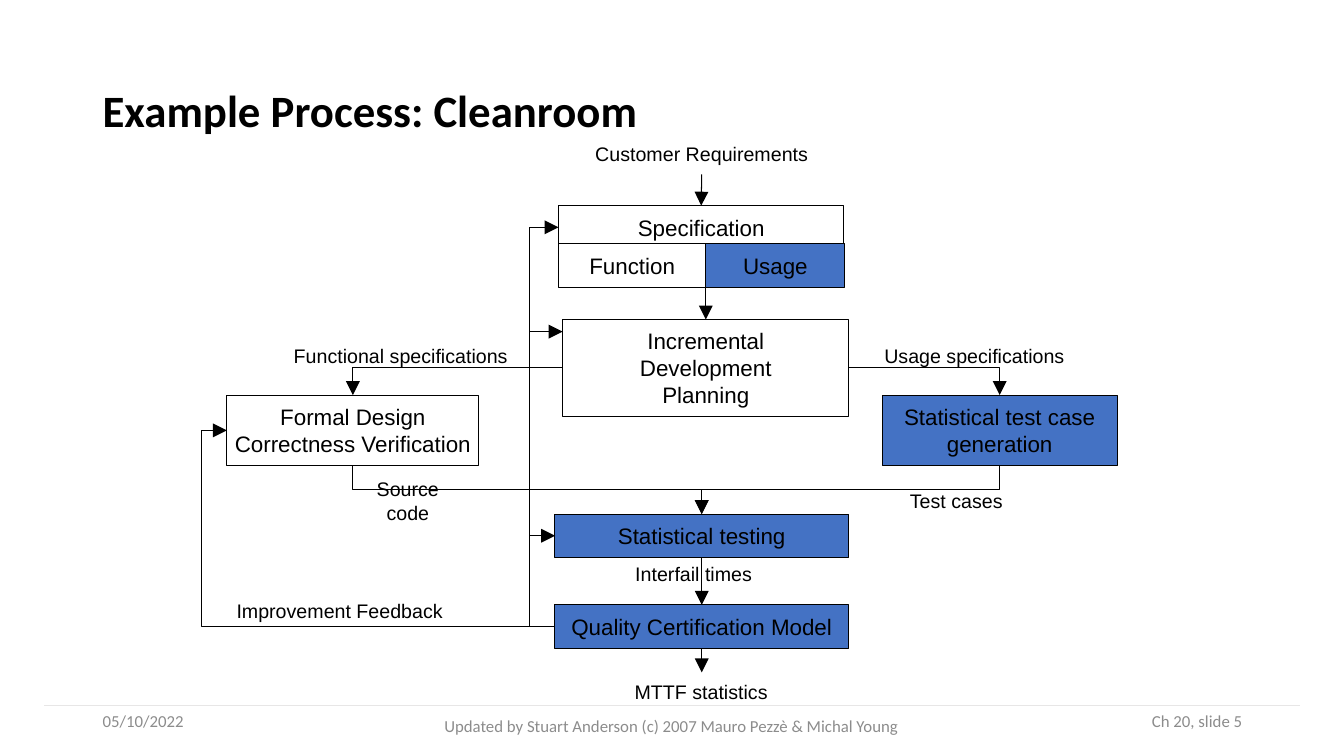
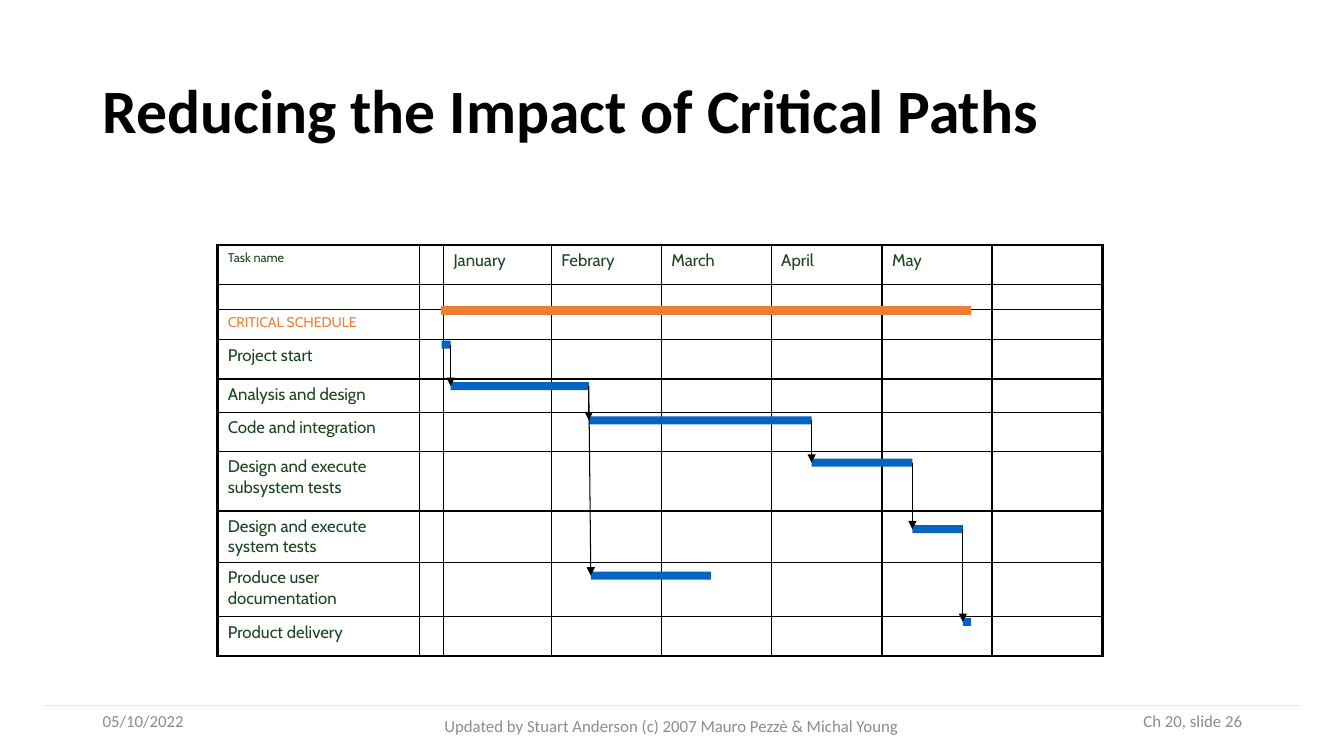
"""Build two slides on software process: a cleanroom flow diagram and a project schedule."""

import dataclasses

import lxml.etree
import pptx
import pptx.dml.color
import pptx.enum.shapes
import pptx.enum.text
import pptx.oxml.ns
import pptx.shapes.autoshape
import pptx.util

Inches = pptx.util.Inches
Pt = pptx.util.Pt
qn = pptx.oxml.ns.qn
Align = pptx.enum.text.PP_ALIGN
ShapeKind = pptx.enum.shapes.MSO_SHAPE
ConnectorKind = pptx.enum.shapes.MSO_CONNECTOR
TOP, LEFT, BOTTOM, RIGHT = range(4)


@dataclasses.dataclass(frozen=True)
class Theme:
    black: str = "000000"
    white: str = "FFFFFF"
    blue: str = "4472C4"
    bar_blue: str = "0563C1"
    orange: str = "ED7D31"
    green: str = "1A4422"
    grey: str = "8C8C8C"
    rule: str = "E7E6E6"
    heading_font: str = "Calibri"
    diagram_font: str = "Arial"
    table_font: str = "Cabin"
    footer_size: float = 12
    box_size: float = 16
    label_size: float = 14
    table_size: float = 12
    critical_size: float = 10
    caption_size: float = 9
    empty_size: float = 8
    thin: float = 0.75
    grid: float = 1
    frame: float = 2.25


theme = Theme()


def add_box(slide, bounds, text="", font=theme.diagram_font, size=theme.box_size,
            color=theme.black, bold=False, align=Align.CENTER, inset=0, fill=None, outline=None):
    """Add a text box, or a rectangle when a fill is given."""
    area = [Inches(value) for value in bounds]
    if fill is None:
        box = slide.shapes.add_textbox(*area)
    else:
        box = slide.shapes.add_shape(ShapeKind.RECTANGLE, *area)
        box.shadow.inherit = False
        box.fill.solid()
        box.fill.fore_color.rgb = pptx.dml.color.RGBColor.from_string(fill)
        if outline is None:
            box.line.fill.background()
        else:
            box.line.color.rgb = pptx.dml.color.RGBColor.from_string(outline)
            box.line.width = Pt(theme.thin)
    if text:
        frame = box.text_frame
        frame.word_wrap = True
        frame.vertical_anchor = pptx.enum.text.MSO_ANCHOR.MIDDLE
        frame.margin_left = frame.margin_right = Inches(inset)
        frame.margin_top = frame.margin_bottom = Inches(0.05)
        frame.text = text
        for para in frame.paragraphs:
            para.alignment = align
            for span in para.runs:
                span.font.name = font
                span.font.size = Pt(size)
                span.font.bold = bold
                span.font.color.rgb = pptx.dml.color.RGBColor.from_string(color)
    return box


def add_link(slide, begin, end, color=theme.black, head="lg", kind=ConnectorKind.STRAIGHT):
    """Connect two stops, each a point or a (shape, side) pair."""
    joined = [isinstance(stop[0], pptx.shapes.autoshape.Shape) for stop in (begin, end)]
    points = [(0, 0) if joint else stop for stop, joint in zip((begin, end), joined)]
    link = slide.shapes.add_connector(kind, *[Inches(value) for value in points[0] + points[1]])
    if joined[0]:
        link.begin_connect(*begin)
    if joined[1]:
        link.end_connect(*end)
    link.line.color.rgb = pptx.dml.color.RGBColor.from_string(color)
    link.line.width = Pt(theme.thin)
    properties = link._element.spPr
    if head:
        lxml.etree.SubElement(properties.find(qn("a:ln")), qn("a:tailEnd"),
                              type="triangle", w=head, len=head)
    lxml.etree.SubElement(properties, qn("a:effectLst"))
    return link


deck = pptx.Presentation()
deck.slide_width = Inches(13.33)
deck.slide_height = Inches(7.5)

slides = []
for title, title_size, number in [
    ("Example Process: Cleanroom", 32, 5),
    ("Reducing the Impact of Critical Paths", 44, 26),
]:
    slide = deck.slides.add_slide(deck.slide_layouts[6])
    slides.append(slide)
    add_link(slide, (0.44, 7), (12.89, 7), theme.rule, head=None)
    heading = add_box(slide, (0.92, 0.4, 11.5, 1.45), title, theme.heading_font, title_size,
                      bold=True, align=Align.LEFT, inset=0.1)
    heading.text_frame.paragraphs[0].line_spacing = 0.9
    for bounds, text, align in [
        ((0.92, 6.95, 1.97, 0.4), "05/10/2022", Align.LEFT),
        ((4.16, 7, 5, 0.4), "Updated by Stuart Anderson (c) 2007 Mauro Pezzè & Michal Young",
         Align.CENTER),
        ((10.29, 6.95, 2.13, 0.4), f"Ch 20, slide {number}", Align.RIGHT),
    ]:
        add_box(slide, bounds, text, theme.heading_font, theme.footer_size, theme.grey,
                align=align, inset=0.1)

process, schedule = slides

boxes = {}
for name, bounds, text, fill in [
    ("specification", (5.54, 2.04, 2.83, 0.43), "Specification", theme.white),
    ("function", (5.54, 2.42, 1.46, 0.43), "Function", theme.white),
    ("usage", (7, 2.42, 1.38, 0.43), "Usage", theme.blue),
    ("planning", (5.58, 3.17, 2.84, 0.96), "Incremental\nDevelopment\nPlanning", theme.white),
    ("generation", (8.75, 3.92, 2.33, 0.7), "Statistical test case generation", theme.blue),
    ("design", (2.25, 3.92, 2.5, 0.7), "Formal Design\nCorrectness Verification", theme.white),
    ("testing", (5.5, 5.1, 2.92, 0.43), "Statistical testing", theme.blue),
    ("quality", (5.5, 6, 2.92, 0.43), "Quality Certification Model", theme.blue),
]:
    boxes[name] = add_box(process, bounds, text, fill=fill, outline=theme.black)

for left, top, width, text in [
    (5.67, 1.33, 2.58, "Customer Requirements"),
    (8.58, 3.33, 2.17, "Usage specifications"),
    (2.87, 3.33, 2.21, "Functional specifications"),
    (3.52, 4.77, 1.05, "Source code"),
    (8.92, 4.77, 1.13, "Test cases"),
    (5.67, 5.5, 2.42, "Interfail times"),
    (2.08, 5.86, 2.58, "Improvement Feedback"),
    (6.08, 6.67, 1.75, "MTTF statistics"),
]:
    add_box(process, (left, top, width, 0.39), text, size=theme.label_size)

for begin, end in [
    ((6.96, 1.73), (boxes["specification"], TOP)),
    ((7, 2.63), (boxes["planning"], TOP)),
    ((boxes["testing"], BOTTOM), (boxes["quality"], TOP)),
    ((boxes["quality"], BOTTOM), (6.96, 6.67)),
]:
    add_link(process, begin, end)

feedback = (boxes["quality"], LEFT)
for begin, end, rotation, flip, turn in [
    ((boxes["planning"], RIGHT), (boxes["generation"], TOP), 0, None, None),
    ((boxes["planning"], LEFT), (boxes["design"], TOP), 180, "flipV", None),
    ((boxes["design"], BOTTOM), (boxes["testing"], TOP), 270, "flipH", 0.24),
    ((boxes["generation"], BOTTOM), (boxes["testing"], TOP), 90, None, 0.24),
    (feedback, (boxes["specification"], LEFT), 180, "flipH", -0.25),
    (feedback, (5.58, 3.29), 180, "flipH", -0.25),
    (feedback, (boxes["testing"], LEFT), 180, "flipH", -0.25),
    (feedback, (boxes["design"], LEFT), 180, None, 3.5),
]:
    elbow = add_link(process, begin, end, kind=ConnectorKind.ELBOW)
    center_x = (elbow.begin_x + elbow.end_x) // 2
    center_y = (elbow.begin_y + elbow.end_y) // 2
    width = max(abs(elbow.end_x - elbow.begin_x), Inches(0.01))
    height = abs(elbow.end_y - elbow.begin_y)
    if rotation in (90, 270):
        width, height = height, width
    elbow.left, elbow.top = center_x - width // 2, center_y - height // 2
    elbow.width, elbow.height = width, height
    elbow.rotation = rotation
    transform = elbow._element.spPr.find(qn("a:xfrm"))
    for name in ("flipH", "flipV"):
        transform.set(name, "1" if name == flip else "0")
    geometry = elbow._element.spPr.find(qn("a:prstGeom"))
    if turn is None:
        geometry.set("prst", "bentConnector2")
    else:
        share = round(Inches(turn) / width * 100000)
        lxml.etree.SubElement(geometry.find(qn("a:avLst")), qn("a:gd"),
                              name="adj1", fmla=f"val {share}")

column_widths = [2, 0.23, 1.07, 1.09, 1.09, 1.1, 1.09, 1.1]
row_heights = [0.39, 0.25, 0.3, 0.39, 0.33, 0.39, 0.59, 0.51, 0.54, 0.39]
months = ["", "January", "Febrary", "March", "April", "May", ""]
tasks = [
    "Task name", "", "CRITICAL SCHEDULE", "Project start", "Analysis and design",
    "Code and integration", "Design and execute subsystem tests",
    "Design and execute system tests", "Produce user documentation", "Product delivery",
]
special_styles = {
    "Task name": (theme.caption_size, theme.green),
    "CRITICAL SCHEDULE": (theme.critical_size, theme.orange),
}
last_row, last_column = len(row_heights) - 1, len(column_widths) - 1

table = schedule.shapes.add_table(
    len(row_heights), len(column_widths), Inches(2.16), Inches(2.43),
    Inches(sum(column_widths)), Inches(sum(row_heights))).table
table.first_row = table.horz_banding = False
for column, width in zip(table.columns, column_widths):
    column.width = Inches(width)
for row, height in zip(table.rows, row_heights):
    row.height = Inches(height)

for row_index, task in enumerate(tasks):
    row_texts = [task] + (months if row_index == 0 else [""] * len(months))
    for column_index, text in enumerate(row_texts):
        cell = table.cell(row_index, column_index)
        cell.margin_bottom = Inches(0.02)
        para = cell.text_frame.paragraphs[0]
        if text:
            para.text = text
            size, color = special_styles.get(text, (theme.table_size, theme.green))
            span = para.runs[0]
            span.font.name = theme.table_font
            span.font.size = Pt(size)
            span.font.color.rgb = pptx.dml.color.RGBColor.from_string(color)
        else:
            lxml.etree.SubElement(para._p, qn("a:endParaRPr"), sz=str(int(theme.empty_size * 100)))
        properties = cell._tc.get_or_add_tcPr()
        for side, on_frame in [
            ("a:lnL", column_index == 0),
            ("a:lnR", column_index == last_column),
            ("a:lnT", row_index == 0),
            ("a:lnB", row_index == last_row),
        ]:
            width = Pt(theme.frame if on_frame else theme.grid)
            border = lxml.etree.SubElement(properties, qn(side), w=str(int(width)))
            paint = lxml.etree.SubElement(border, qn("a:solidFill"))
            lxml.etree.SubElement(paint, qn("a:srgbClr"), val=theme.black)
        cell.fill.background()

bar_height = 0.08
bars = {}
for name, start, end, middle in [
    ("start", 4.38, 4.47, 3.42),
    ("analysis", 4.47, 5.84, 3.83),
    ("code", 5.84, 8.05, 4.17),
    ("subsystem", 8.05, 9.05, 4.59),
    ("system", 9.05, 9.55, 5.25),
    ("delivery", 9.55, 9.63, 6.17),
    ("documentation", 5.86, 7.05, 5.71),
]:
    bounds = (start, middle - bar_height / 2, end - start, bar_height)
    bars[name] = add_box(schedule, bounds, fill=theme.bar_blue)

chain = ["start", "analysis", "code", "subsystem", "system", "delivery"]
for before, after in [*zip(chain, chain[1:]), ("analysis", "documentation")]:
    add_link(schedule, (bars[before], RIGHT), (bars[after], LEFT), head="med")
add_box(schedule, (4.38, 3.04, 5.25, bar_height), fill=theme.orange, outline=theme.orange)

deck.save("out.pptx")
